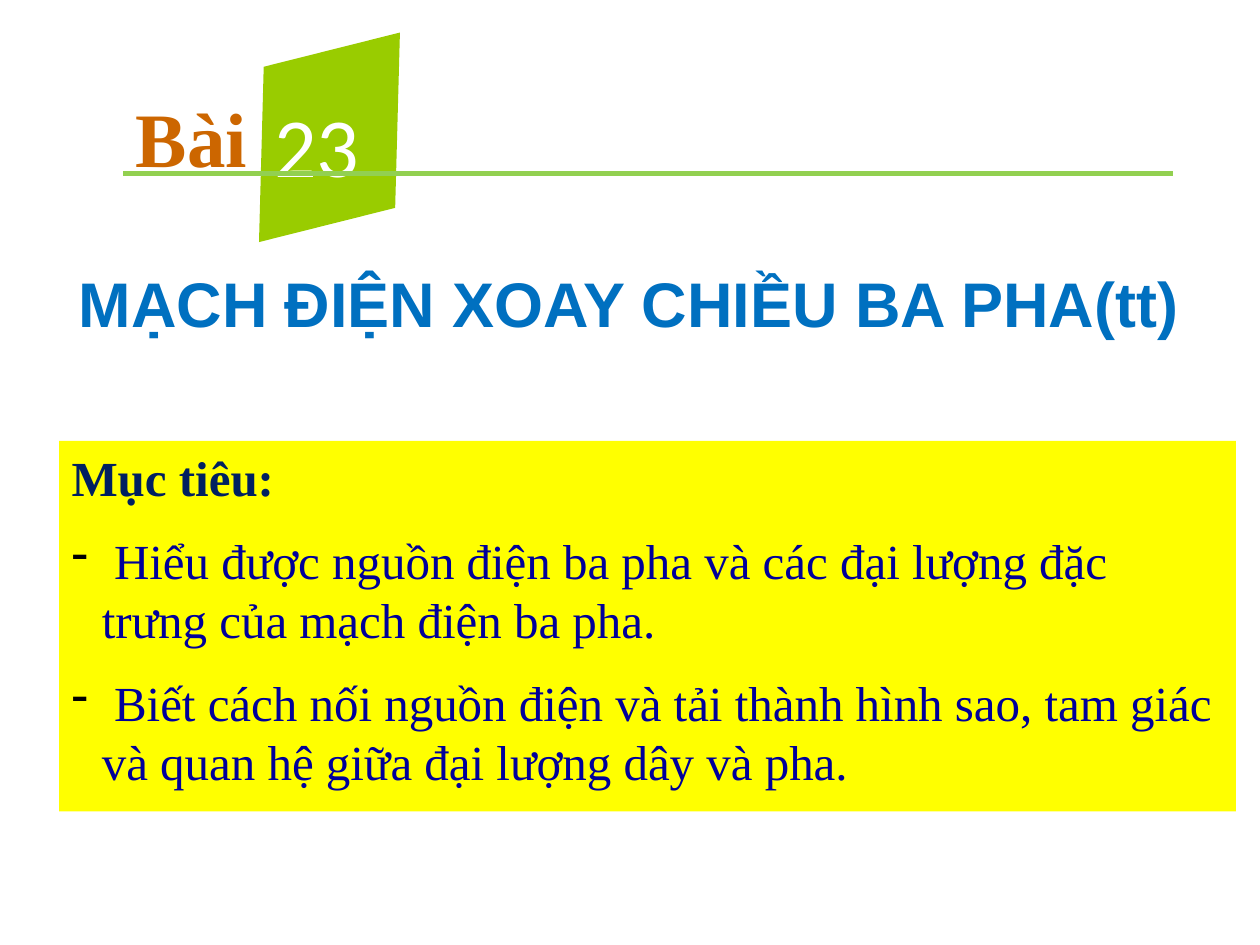
from lxml import etree
from pptx import Presentation
from pptx.dml.color import RGBColor
from pptx.enum import shapes, text
from pptx.oxml.ns import qn
from pptx.util import Inches, Pt

BLUE = RGBColor(0x00, 0x70, 0xC0)
YELLOW = RGBColor(0xFF, 0xFF, 0x00)
DARK_BLUE = RGBColor(0x00, 0x20, 0x60)
NAVY = RGBColor(0x00, 0x00, 0x99)
LIME = RGBColor(0x99, 0xCC, 0x00)
GREEN = RGBColor(0x92, 0xD0, 0x50)
ORANGE = RGBColor(0xCC, 0x66, 0x00)
WHITE = RGBColor(0xFF, 0xFF, 0xFF)

GOALS = [
    "Hiểu được nguồn điện ba pha và các đại lượng đặc trưng của mạch điện ba pha.",
    "Biết cách nối nguồn điện và tải thành hình sao, tam giác và quan hệ giữa đại lượng dây và pha.",
]


def set_font(paragraph, name, size, color, bold=False):
    paragraph.font.name = name
    paragraph.font.size = Pt(size)
    paragraph.font.bold = bold
    paragraph.font.color.rgb = color


def add_block(slide, preset, left, top, width, height, color):
    shape = slide.shapes.add_shape(preset, Inches(left), Inches(top), Inches(width), Inches(height))
    shape.shadow.inherit = False
    shape.fill.solid()
    shape.fill.fore_color.rgb = color
    shape.line.fill.background()
    return shape


presentation = Presentation()
presentation.slide_width = Inches(10)
presentation.slide_height = Inches(7.5)
slide = presentation.slides.add_slide(presentation.slide_layouts[0])
empty_title = slide.shapes.title.element
empty_title.getparent().remove(empty_title)

lesson_title = slide.placeholders[1]
lesson_title.left, lesson_title.top = Inches(0.17), Inches(2.05)
lesson_title.width, lesson_title.height = Inches(9.64), Inches(1.8)
lesson_title.text_frame.text = "MẠCH ĐIỆN XOAY CHIỀU BA PHA(tt)"
paragraph = lesson_title.text_frame.paragraphs[0]
paragraph.alignment = text.PP_ALIGN.CENTER
set_font(paragraph, "Arial", 36, BLUE, True)

goals_box = add_block(slide, shapes.MSO_SHAPE.RECTANGLE, 0.47, 3.5, 9.34, 2.94, YELLOW)
frame = goals_box.text_frame
frame.word_wrap = True
frame.vertical_anchor = text.MSO_ANCHOR.TOP
heading = frame.paragraphs[0]
heading.text = "Mục tiêu:"
heading.alignment = text.PP_ALIGN.LEFT
heading.space_before = Pt(5.6)
set_font(heading, "Times New Roman", 28, DARK_BLUE, True)
for goal in GOALS:
    paragraph = frame.add_paragraph()
    paragraph.text = " " + goal
    paragraph.alignment = text.PP_ALIGN.LEFT
    paragraph.space_before = Pt(14)
    set_font(paragraph, "Times New Roman", 28, NAVY)
    properties = paragraph._p.get_or_add_pPr()
    properties.set("marL", str(Inches(0.24)))
    properties.set("indent", str(-Inches(0.24)))
    bullet_color = etree.Element(qn("a:buClr"))
    etree.SubElement(bullet_color, qn("a:srgbClr"), val="000000")
    bullet = etree.Element(qn("a:buChar"), char="-")
    defaults = properties.find(qn("a:defRPr"))
    defaults.addprevious(bullet_color)
    defaults.addprevious(bullet)

number_tile = add_block(slide, shapes.MSO_SHAPE.PARALLELOGRAM, 1.87, 0.42, 1.49, 1.34, LIME)
number_tile.adjustments[0] = 0.28
number_tile.rotation = 345.9

for label, left, top, width, font_name, size, color, bold, spacing in [
    ("Bài", 0.98, 0.46, 1.17, "Times New Roman", 44, ORANGE, True, 1.0),
    ("23", 2.08, 0.57, 1.19, "Calibri", 48, WHITE, False, 0.9),
]:
    label_box = slide.shapes.add_textbox(Inches(left), Inches(top), Inches(width), Inches(1.25))
    label_box.text_frame.word_wrap = True
    label_box.text_frame.vertical_anchor = text.MSO_ANCHOR.MIDDLE
    paragraph = label_box.text_frame.paragraphs[0]
    paragraph.text = label
    paragraph.line_spacing = spacing
    set_font(paragraph, font_name, size, color, bold)

rule = slide.shapes.add_connector(
    shapes.MSO_CONNECTOR.STRAIGHT, Inches(0.98), Inches(1.38), Inches(9.31), Inches(1.38))
rule.line.color.rgb = GREEN
rule.line.width = Pt(3)
etree.SubElement(rule.element.spPr, qn("a:effectLst"))

presentation.save("out.pptx")
